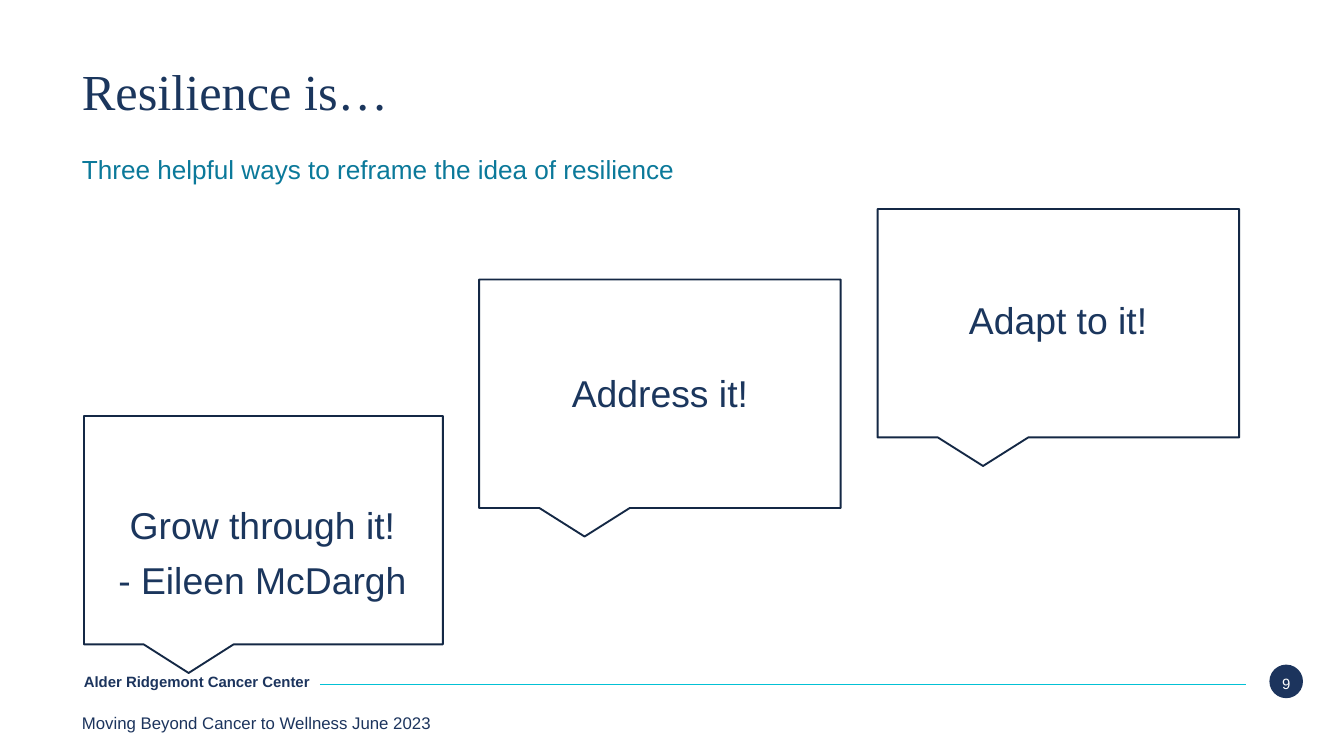
from lxml import etree
from pptx import Presentation
from pptx.dml.color import RGBColor
from pptx.enum.shapes import MSO_CONNECTOR, MSO_SHAPE
from pptx.enum.text import MSO_ANCHOR, PP_ALIGN
from pptx.oxml.ns import qn
from pptx.util import Pt

PX = 9144
NAVY = RGBColor(0x1C, 0x34, 0x5D)
INK = RGBColor(0x1B, 0x36, 0x5D)
EDGE = RGBColor(0x14, 0x28, 0x45)
AQUA = RGBColor(0x03, 0xC1, 0xD5)
TEAL = RGBColor(0x0B, 0x79, 0x9A)
WHITE = RGBColor(0xFF, 0xFF, 0xFF)
SANS, SERIF = "Arial", "Times New Roman"
LEFT, MID = PP_ALIGN.LEFT, PP_ALIGN.CENTER
TOP, MIDDLE = MSO_ANCHOR.TOP, MSO_ANCHOR.MIDDLE
OVAL, BUBBLE = MSO_SHAPE.OVAL, MSO_SHAPE.RECTANGULAR_CALLOUT
STRAIGHT = MSO_CONNECTOR.STRAIGHT

BUBBLES = [
    ((713, 416, 538, 340), (-13, 130, 564, 77), ["Address it!"]),
    ((1306, 311, 538, 340), (10, 126, 517, 77), ["Adapt to it!"]),
    ((125, 619, 534, 340), (37, 124, 457, 159),
     ["Grow through it!", "- Eileen McDargh"]),
]


def emu(*lengths):
    """Turn px lengths into EMU."""
    return [n * PX for n in lengths]


def add_text(slide, box, lines, size, color, font=SANS, align=LEFT,
             anchor=TOP, bold=False, gap=0):
    """Write lines in a wrapped text box and return its frame."""
    frame = slide.shapes.add_textbox(*emu(*box)).text_frame
    frame.word_wrap = True
    frame.vertical_anchor = anchor
    for i, line in enumerate(lines):
        para = frame.add_paragraph() if i else frame.paragraphs[0]
        para.alignment = align
        para.space_before = Pt(gap if i else 0)
        run = para.add_run()
        run.text = line
        run.font.name = font
        run.font.size = Pt(size)
        run.font.bold = bold
        run.font.color.rgb = color
    return frame


def add_badge(slide, box, label):
    """Draw the round page number."""
    x, y, w, h = box
    disc = slide.shapes.add_shape(OVAL, *emu(*box))
    disc.shadow.inherit = False
    disc.fill.solid()
    disc.fill.fore_color.rgb = NAVY
    disc.line.fill.background()
    frame = add_text(slide, (x + 8, y + 3, w - 16, h - 15), [label], 16,
                     WHITE, align=MID)
    frame.margin_left = frame.margin_right = 0
    frame.margin_top = frame.margin_bottom = 0
    frame.paragraphs[0].line_spacing = Pt(28)


def add_footer(slide, box):
    """Place the center name, rule, page number and event line."""
    x, y, w, h = box
    add_badge(slide, (x + w - 50, y, 50, 50), "9")
    rule = slide.shapes.add_connector(
        STRAIGHT, *emu(x + 364, y + 29, x + w - 85, y + 29))
    rule.line.color.rgb = AQUA
    rule.line.width = Pt(1)
    etree.SubElement(rule._element.spPr, qn("a:effectLst"))
    add_text(slide, (x + 3, y + 7, 374, 49),
             ["Alder Ridgemont Cancer Center"], 16, NAVY, bold=True)
    add_text(slide, (x, y + h - 60, 1741, 60),
             ["Moving Beyond Cancer to Wellness June 2023"], 18, NAVY)


def add_header(slide, box):
    """Place the title and the subtitle."""
    x, y, w, h = box
    add_text(slide, (x, y, w, 107), ["Resilience is…"], 54, INK,
             font=SERIF, anchor=MIDDLE)
    add_text(slide, (x, y + h - 97, w, 97),
             ["Three helpful ways to reframe the idea of resilience"],
             28, TEAL)


def add_bubble(slide, box, inner, lines):
    """Draw one speech bubble with its words at an inner box."""
    x, y, w, h = box
    dx, dy, tw, th = inner
    shape = slide.shapes.add_shape(BUBBLE, *emu(x, y, w, h))
    shape.shadow.inherit = False
    shape.fill.background()
    shape.line.color.rgb = EDGE
    shape.line.width = Pt(2)
    add_text(slide, (x + dx, y + dy, tw, th), lines, 40, INK,
             align=MID, gap=11)


def main():
    """Build the slide and save it."""
    deck = Presentation()
    deck.slide_width, deck.slide_height = emu(2000, 1125)
    slide = deck.slides.add_slide(deck.slide_layouts[6])
    add_footer(slide, (112, 989, 1827, 127))
    for box, inner, lines in BUBBLES:
        add_bubble(slide, box, inner, lines)
    add_header(slide, (112, 81, 1741, 239))
    deck.save("out.pptx")


if __name__ == "__main__":
    main()
